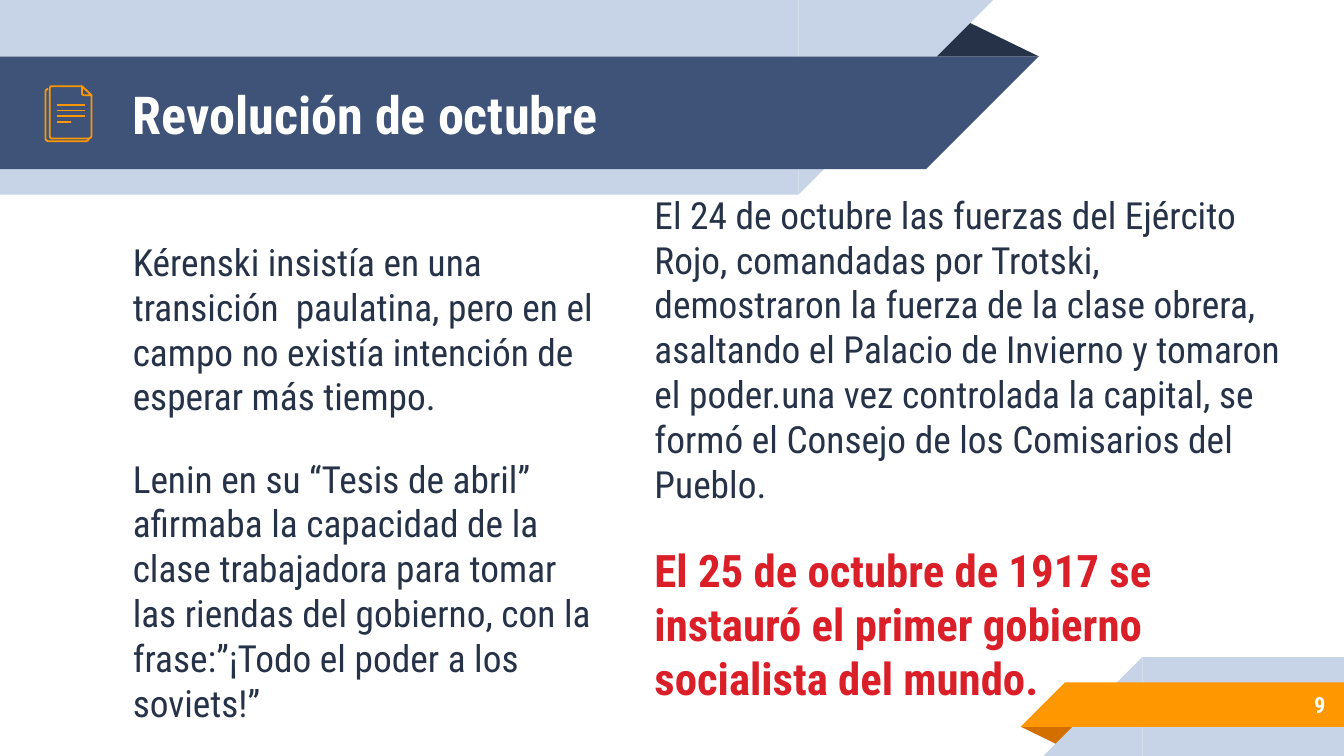
from pptx import Presentation
from pptx import util as u
from pptx.dml.color import RGBColor
from pptx.enum import shapes, text
from pptx.oxml.ns import qn
from lxml import etree

THEME = {
    "font": "Roboto Condensed",
    "ink": "263248", "navy": "3F5378", "pale": "C7D3E6",
    "orange": "FF9800", "rust": "D26F00", "red": "DA1F28", "white": "FFFFFF",
    "title": 28, "lead": 24, "body": 20, "number": 12, "icon_line": 0.96,
}

TITLE = [("Revolución de octubre", "title", "white", True)]
LEFT = [
    ("Kérenski insistía en una transición  paulatina, pero en el campo no existía "
     "intención de esperar más tiempo.", "body", "ink", False),
    ("Lenin en su “Tesis de abril” afirmaba la capacidad de la clase trabajadora "
     "para tomar las riendas del gobierno, con la frase:”¡Todo el poder a los "
     "soviets!”", "body", "ink", False),
]
RIGHT = [
    ("El 24 de octubre las fuerzas del Ejército Rojo, comandadas por Trotski, "
     "demostraron la fuerza de la clase obrera, asaltando el Palacio de Invierno y "
     "tomaron el poder.una vez controlada la capital, se formó el Consejo de los "
     "Comisarios del Pueblo.", "body", "ink", False),
    ("El 25 de octubre de 1917 se instauró el primer gobierno socialista del mundo.",
     "lead", "red", True),
]
NUMBER = [("9", "number", "white", True)]

TOP_FOLD = (17.48, 0.36, 2.16, 0.71)
TOP_BANDS = [(0, 0, 15.09, 3.68, "pale"), (0, 1.07, 17.5, 2.13, "navy")]
BOTTOM_FOLD = (19.3, 13.74, 1.09, 0.36)
BOTTOM_BANDS = [(21.59, 12.42, 3.81, 1.87, "pale"), (20.13, 12.9, 5.27, 0.84, "orange")]

BACK_PAGE = [(1.68, 2.62), (1.67, 2.65), (1.63, 2.67), (0.91, 2.67),
             (0.87, 2.65), (0.86, 2.62), (0.86, 1.73), (0.87, 1.7), (0.91, 1.68)]
FRONT_PAGE = [(1.73, 1.8), (1.73, 2.57), (1.72, 2.6), (1.68, 2.62), (0.97, 2.62),
              (0.95, 2.6), (0.94, 2.57), (0.94, 1.68), (0.95, 1.64), (0.97, 1.63),
              (1.55, 1.63)]
CORNER = [(1.55, 1.78), (1.55, 1.63), (1.73, 1.8), (1.58, 1.8)]
PAGE_LINES = [1.6, 1.6, 1.6, 1.35]

prs = Presentation()
prs.slide_width, prs.slide_height = u.Cm(25.4), u.Cm(14.29)
s = prs.slides.add_slide(prs.slide_layouts[6])


def color(name):
    return RGBColor.from_string(THEME[name])


def add_block(kind, box, fill, rotation=0, flip=False):
    sp = s.shapes.add_shape(kind, *map(u.Cm, box))
    sp.shadow.inherit = False
    sp.fill.solid()
    sp.fill.fore_color.rgb = color(fill)
    sp.line.fill.background()
    sp.rotation = rotation
    if flip:
        sp._element.spPr.find(qn("a:xfrm")).set("flipH", "1")
    return sp


def add_fold(box, fill, rotation=0):
    sp = add_block(shapes.MSO_SHAPE.ISOSCELES_TRIANGLE, box, fill, rotation)
    sp.adjustments[0] = 0.324


def add_band(x, y, w, h, fill, top):
    add_block(shapes.MSO_SHAPE.RECTANGLE, (x, y, w, h), fill)
    tip = x + w if top else x - h
    add_block(shapes.MSO_SHAPE.RIGHT_TRIANGLE, (tip, y, h, h), fill,
              180 if top else 0, flip=True)


def add_text(box, paragraphs, anchor=text.MSO_ANCHOR.TOP, align=text.PP_ALIGN.LEFT,
             space=0, top=0.25):
    tf = s.shapes.add_textbox(*map(u.Cm, box)).text_frame
    tf.word_wrap = True
    tf.vertical_anchor = anchor
    tf.margin_left = tf.margin_right = tf.margin_bottom = u.Cm(0.25)
    tf.margin_top = u.Cm(top)
    for i, (words, size, ink, bold) in enumerate(paragraphs):
        p = tf.add_paragraph() if i else tf.paragraphs[0]
        p.alignment = align
        p.space_before = p.space_after = u.Pt(space)
        r = p.add_run()
        r.text = words
        r.font.name = THEME["font"]
        r.font.size = u.Pt(THEME[size])
        r.font.bold = bold
        r.font.color.rgb = color(ink)


def style_stroke(sp):
    sp.line.color.rgb = color("orange")
    sp.line.width = u.Pt(THEME["icon_line"])


def add_outline(points, close=False):
    start, *rest = [(u.Cm(x), u.Cm(y)) for x, y in points]
    builder = s.shapes.build_freeform(*start)
    builder.add_line_segments(rest, close=close)
    sp = builder.convert_to_shape()
    sp.shadow.inherit = False
    sp.fill.background()
    style_stroke(sp)


def add_rule(x1, x2, y):
    line = s.shapes.add_connector(shapes.MSO_CONNECTOR.STRAIGHT,
                                  u.Cm(x1), u.Cm(y), u.Cm(x2), u.Cm(y))
    style_stroke(line)
    etree.SubElement(line._element.spPr, qn("a:effectLst"))


add_fold(TOP_FOLD, "ink")
for band in TOP_BANDS:
    add_band(*band, top=True)
add_fold(BOTTOM_FOLD, "rust", 180)
for band in BOTTOM_BANDS:
    add_band(*band, top=False)

add_text((2.26, 1.09, 14.61, 2.13), TITLE, text.MSO_ANCHOR.MIDDLE)
add_text((2.26, 4.27, 9.37, 7.57), LEFT, space=10)
add_text((12.12, 2.18, 12.5, 7.57), RIGHT, space=10, top=1.45)
add_text((21.16, 12.88, 4.14, 0.89), NUMBER, text.MSO_ANCHOR.MIDDLE,
         text.PP_ALIGN.RIGHT)

add_outline(BACK_PAGE)
add_outline(FRONT_PAGE)
add_outline(CORNER, close=True)
for i, end in enumerate(PAGE_LINES):
    add_rule(1.07, end, 1.98 + 0.11 * i)

prs.save("out.pptx")
